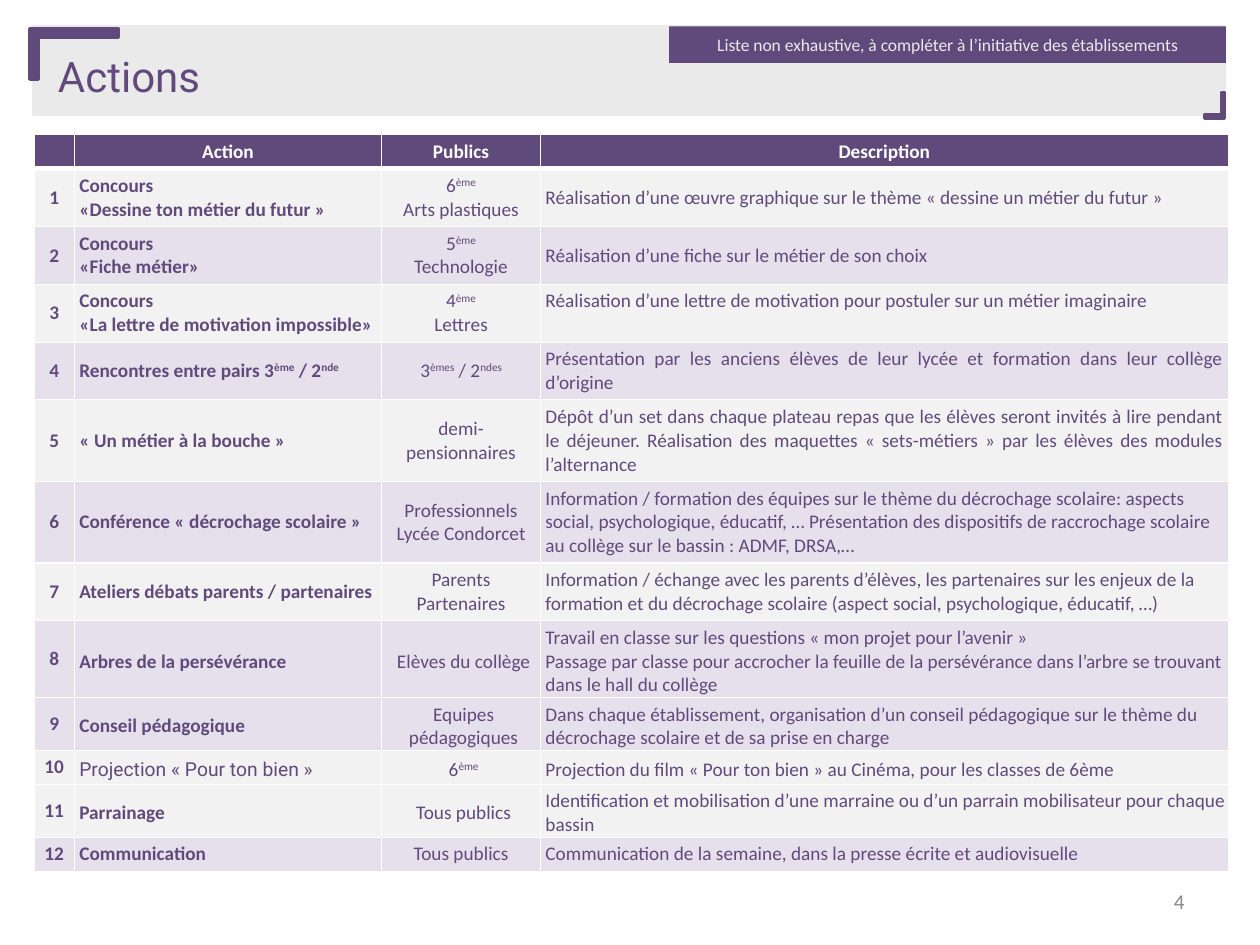
"""Build the "Actions" slide: a titled table of school actions."""

from dataclasses import dataclass

from lxml.etree import SubElement
from pptx import Presentation
from pptx.dml.color import RGBColor
from pptx.enum.shapes import MSO_SHAPE
from pptx.enum.text import MSO_ANCHOR, MSO_AUTO_SIZE, PP_ALIGN
from pptx.oxml.ns import qn
from pptx.util import Inches, Pt


@dataclass(frozen=True)
class Theme:
    purple: str = "604A7B"
    lilac: str = "E6E0EC"
    light: str = "F2F2F2"
    band: str = "EAEAEA"
    white: str = "FFFFFF"
    grey: str = "898989"
    body_font: str = "Calibri"
    title_font: str = "Roboto"
    title_size: float = 24
    number_size: float = 12
    table_size: float = 11
    note_size: float = 10


@dataclass(frozen=True)
class Box:
    left: float
    top: float
    width: float
    height: float

    def lengths(self) -> tuple:
        return tuple(map(Inches, (self.left, self.top, self.width, self.height)))


@dataclass(frozen=True)
class Action:
    name: str
    publics: str
    description: str
    height: float
    shaded: bool = False
    tight: bool = False
    justified: bool = False
    name_font: str = ""
    description_anchor: MSO_ANCHOR = MSO_ANCHOR.MIDDLE


THEME = Theme()
COLUMN_WIDTHS = (0.32, 2.44, 1.26, 5.46)
HEADINGS = ("", "Action", "Publics", "Description")
HEADER_HEIGHT = 0.26
ACTIONS = (
    Action("Concours\n«Dessine ton métier du futur »", "6^ème^\nArts plastiques",
           "Réalisation d’une œuvre graphique sur le thème « dessine un métier du futur »",
           0.46, justified=True),
    Action("Concours\n«Fiche métier»", "5^ème^\nTechnologie",
           "Réalisation d’une fiche sur le métier de son choix",
           0.45, shaded=True, justified=True),
    Action("Concours\n«La lettre de motivation impossible»", "4^ème^\nLettres",
           "Réalisation d’une lettre de motivation pour postuler sur un métier imaginaire",
           0.46, justified=True, description_anchor=MSO_ANCHOR.TOP),
    Action("Rencontres entre pairs 3^ème^ / 2^nde^", "3^èmes^ / 2^ndes^",
           "Présentation par les anciens élèves de leur lycée et formation dans leur collège "
           "d’origine", 0.45, shaded=True, justified=True),
    Action("« Un métier à la bouche »", "demi-pensionnaires",
           "Dépôt d’un set dans chaque plateau repas que les élèves seront invités à lire "
           "pendant le déjeuner. Réalisation des maquettes « sets-métiers » par les élèves "
           "des modules l’alternance", 0.65, justified=True),
    Action("Conférence « décrochage scolaire »", "Professionnels\nLycée Condorcet",
           "Information / formation des équipes sur le thème du décrochage scolaire: aspects "
           "social, psychologique, éducatif, … Présentation des dispositifs de raccrochage "
           "scolaire au collège sur le bassin : ADMF, DRSA,…", 0.64, shaded=True),
    Action("Ateliers débats parents / partenaires", "Parents\nPartenaires",
           "Information / échange avec les parents d’élèves, les partenaires sur les enjeux "
           "de la formation et du décrochage scolaire (aspect social, psychologique, "
           "éducatif, …)", 0.45),
    Action("Arbres de la persévérance", "Elèves du collège",
           "Travail en classe sur les questions « mon projet pour l’avenir »\n"
           "Passage par classe pour accrocher la feuille de la persévérance dans l’arbre se "
           "trouvant dans le hall du collège", 0.61, shaded=True, tight=True),
    Action("Conseil pédagogique", "Equipes pédagogiques",
           "Dans chaque établissement, organisation d’un conseil pédagogique sur le thème du "
           "décrochage scolaire et de sa prise en charge", 0.42, shaded=True, tight=True),
    Action("Projection « Pour ton bien »", "6^ème^",
           "Projection du film « Pour ton bien » au Cinéma, pour les classes de 6ème",
           0.27, tight=True, name_font=THEME.title_font),
    Action("Parrainage", "Tous publics",
           "Identification et mobilisation d’une marraine ou d’un parrain mobilisateur pour "
           "chaque bassin", 0.42, tight=True),
    Action("Communication", "Tous publics",
           "Communication de la semaine, dans la presse écrite et audiovisuelle",
           0.27, shaded=True),
)


def write(frame, text: str, size: float, color: str, align=PP_ALIGN.LEFT,
          font: str = THEME.body_font, bold: bool = False) -> None:
    """Write one paragraph per line, raising the parts between carets."""
    for index, line in enumerate(text.split("\n")):
        paragraph = frame.add_paragraph() if index else frame.paragraphs[0]
        paragraph.alignment = align
        paragraph.font.name = font
        paragraph.font.size = Pt(size)
        paragraph.font.bold = bold
        paragraph.font.color.rgb = RGBColor.from_string(color)
        for part, piece in enumerate(line.split("^")):
            if piece:
                run = paragraph.add_run()
                run.text = piece
                if part % 2:
                    run.font._element.set("baseline", "30000")
        if not line:
            SubElement(paragraph._p, qn("a:endParaRPr"), sz=str(int(size * 100)))


def add_block(slide, kind, box: Box, color: str, outlined: bool = True, rotation: float = 0):
    """Add a flat filled shape, outlined in its own colour if asked."""
    shape = slide.shapes.add_shape(kind, *box.lengths())
    shape.shadow.inherit = False
    shape.rotation = rotation
    shape.fill.solid()
    shape.fill.fore_color.rgb = RGBColor.from_string(color)
    if outlined:
        shape.line.color.rgb = RGBColor.from_string(color)
        shape.line.width = Pt(2)
    else:
        shape.line.fill.background()
    return shape


def add_corner(slide, box: Box, rotation: float) -> None:
    """Add a thin L-shaped corner mark."""
    corner = add_block(slide, MSO_SHAPE.CORNER, box, THEME.purple, rotation=rotation)
    corner.adjustments[0], corner.adjustments[1] = 0.16, 0.17


def style_cell(cell, fill: str, anchor, tight: bool, top: float, bottom: float) -> None:
    """Set margins, anchor, white borders and fill of a cell."""
    cell.margin_left = cell.margin_top = Inches(0.04)
    cell.margin_right = cell.margin_bottom = Inches(0 if tight else 0.04)
    cell.vertical_anchor = anchor
    properties = cell._tc.get_or_add_tcPr()
    for side, width in (("L", 0.75), ("R", 0.75), ("T", top), ("B", bottom)):
        line = SubElement(properties, qn(f"a:ln{side}"), w=str(Pt(width)))
        SubElement(SubElement(line, qn("a:solidFill")), qn("a:srgbClr"), val=THEME.white)
    cell.fill.solid()
    cell.fill.fore_color.rgb = RGBColor.from_string(fill)


def add_action_table(slide) -> None:
    """Add the table with its header and numbered actions."""
    heights = (HEADER_HEIGHT, *(action.height for action in ACTIONS))
    box = Box(0.27, 1.07, sum(COLUMN_WIDTHS), sum(heights))
    table = slide.shapes.add_table(len(heights), len(COLUMN_WIDTHS), *box.lengths()).table
    for column, width in zip(table.columns, COLUMN_WIDTHS):
        column.width = Inches(width)
    for row, height in zip(table.rows, heights):
        row.height = Inches(height)
    for column, heading in enumerate(HEADINGS):
        cell = table.cell(0, column)
        style_cell(cell, THEME.purple, MSO_ANCHOR.TOP, False, 0.75, 3)
        write(cell.text_frame, heading, THEME.table_size, THEME.white, PP_ALIGN.CENTER, bold=True)
    for number, action in enumerate(ACTIONS, 1):
        description_align = PP_ALIGN.JUSTIFY if action.justified else PP_ALIGN.LEFT
        name_font = action.name_font or THEME.body_font
        entries = (
            (str(number), PP_ALIGN.CENTER, THEME.body_font, True),
            (action.name, PP_ALIGN.LEFT, name_font, not action.name_font),
            (action.publics, PP_ALIGN.CENTER, THEME.body_font, False),
            (action.description, description_align, THEME.body_font, False),
        )
        for column, (text, align, font, bold) in enumerate(entries):
            cell = table.cell(number, column)
            anchor = action.description_anchor if column == 3 else MSO_ANCHOR.MIDDLE
            style_cell(cell, THEME.lilac if action.shaded else THEME.light, anchor,
                       action.tight and column > 0, 3 if number == 1 else 0.75, 0.75)
            write(cell.text_frame, text, THEME.table_size, THEME.purple, align, font, bold)


def main() -> None:
    """Assemble and save the slide."""
    presentation = Presentation()
    presentation.slide_width, presentation.slide_height = Inches(10), Inches(7.5)
    slide = presentation.slides.add_slide(presentation.slide_layouts[5])
    add_action_table(slide)

    number = slide.shapes.add_textbox(*Box(7.17, 6.95, 2.33, 0.4).lengths()).text_frame
    number.word_wrap = True
    number.vertical_anchor = MSO_ANCHOR.MIDDLE
    write(number, "4", THEME.number_size, THEME.grey, PP_ALIGN.RIGHT)

    add_block(slide, MSO_SHAPE.RECTANGLE, Box(0.27, 0.21, 9.45, 0.7), THEME.band)
    add_corner(slide, Box(0.39, 0.08, 0.4, 0.7), 90)

    title = slide.shapes.title
    title.left, title.top, title.width, title.height = Box(0.36, 0.35, 1.41, 0.5).lengths()
    title.text_frame.word_wrap = False
    title.text_frame.auto_size = MSO_AUTO_SIZE.SHAPE_TO_FIT_TEXT
    title.text_frame.vertical_anchor = MSO_ANCHOR.TOP
    write(title.text_frame, "Actions", THEME.title_size, THEME.purple, font=THEME.title_font)
    slide.shapes._spTree.append(title._element)

    note = add_block(slide, MSO_SHAPE.RECTANGLE, Box(5.31, 0.21, 4.42, 0.29), THEME.purple, False)
    write(note.text_frame, "Liste non exhaustive, à compléter à l’initiative des établissements",
          THEME.note_size, THEME.band, PP_ALIGN.CENTER)
    add_corner(slide, Box(9.54, 0.76, 0.2, 0.16), 270)
    presentation.save("out.pptx")


if __name__ == "__main__":
    main()
